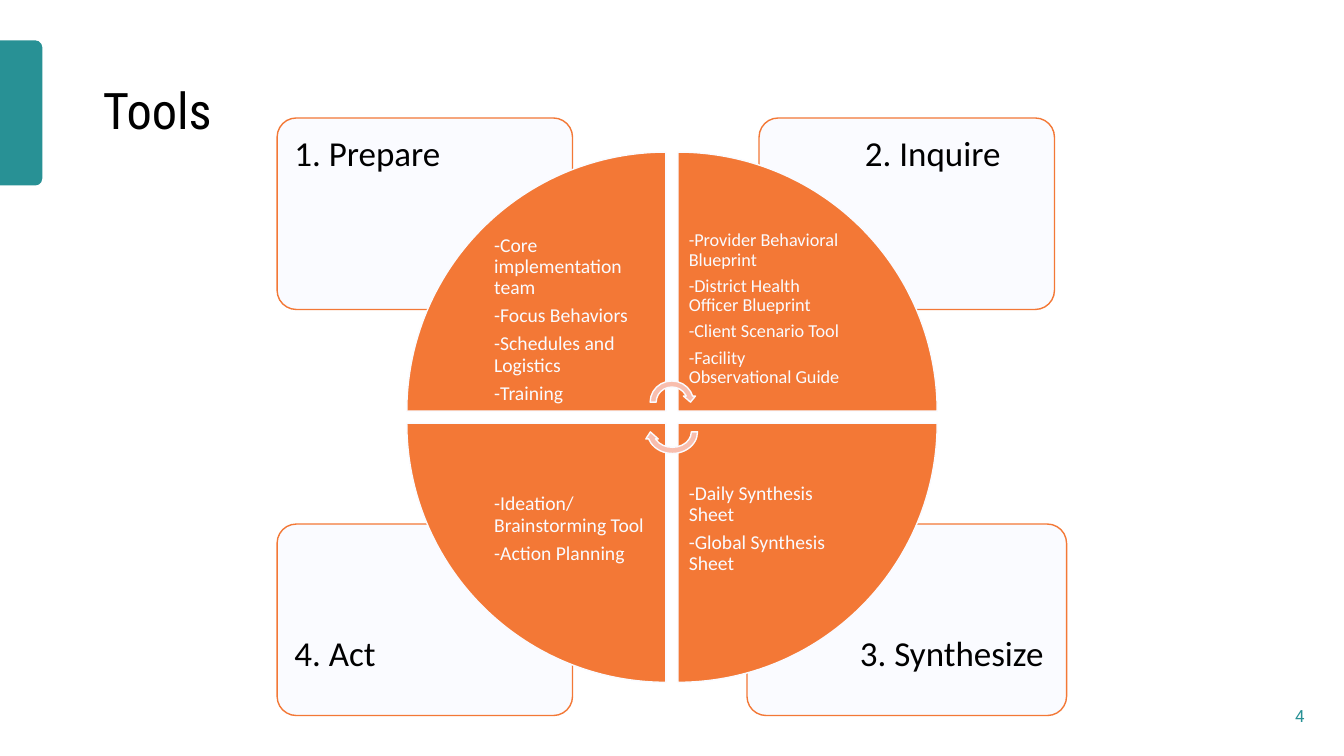
from lxml import etree
from pptx import Presentation
from pptx import util as u
from pptx.dml.color import RGBColor
from pptx.enum import shapes, text
from pptx.oxml.ns import qn

G = shapes.MSO_SHAPE
TOP, MID = text.MSO_ANCHOR.TOP, text.MSO_ANCHOR.MIDDLE
LEFT, RIGHT = text.PP_ALIGN.LEFT, text.PP_ALIGN.RIGHT


def rgb(code):
    return RGBColor.from_string(code)


class Deck:
    """Style and current slide; lengths are square cells, 100 columns wide."""
    TEAL, ORANGE, PALE, PEACH, BLACK = "289195", "F37836", "FAFBFF", "F8BEAE", "000000"

    def __init__(self):
        self.prs = Presentation()
        self.prs.slide_width, self.prs.slide_height = u.Inches(13.33), u.Inches(7.5)
        self.slide = self.prs.slides.add_slide(self.prs.slide_layouts[6])

    def cell(self, *vals):
        return [round(v * self.prs.slide_width / 100) for v in vals]

    def shape(self, kind, box, fill, line=None, turn=0, alpha=None):
        shp = self.slide.shapes.add_shape(kind, *self.cell(*box))
        shp.shadow.inherit = False
        shp.rotation = turn
        shp.fill.solid()
        shp.fill.fore_color.rgb = rgb(fill)
        if alpha:
            tint = shp.fill._xPr.find(".//" + qn("a:srgbClr"))
            etree.SubElement(tint, qn("a:alpha")).set("val", str(alpha * 1000))
        if line:
            shp.line.color.rgb = rgb(line)
            shp.line.width = u.Pt(1)
        else:
            shp.line.fill.background()
        return shp

    def label(self, box, lines, size, color, font="Calibri", anchor=MID,
              align=LEFT, pad=0.75, lead=0.9, after=0):
        frame = self.slide.shapes.add_textbox(*self.cell(*box)).text_frame
        frame.word_wrap = True
        frame.vertical_anchor = anchor
        inset = self.cell(pad)[0]
        frame.margin_left = frame.margin_right = inset
        frame.margin_top = frame.margin_bottom = inset
        for i, line in enumerate(lines):
            par = frame.add_paragraph() if i else frame.paragraphs[0]
            par.text = line
            par.alignment, par.line_spacing = align, lead
            par.space_after = u.Pt(after)
            par.font.size, par.font.name = u.Pt(size), font
            par.font.color.rgb = rgb(color)

    def card(self, box):
        shp = self.shape(G.ROUNDED_RECTANGLE, box, self.PALE, self.ORANGE, alpha=90)
        shp.adjustments[0] = 0.1


def main():
    deck = Deck()

    # Side tab, title and page number
    deck.shape(G.ROUND_2_SAME_RECTANGLE, (-3.83, 6.83, 10.8, 3.15), deck.TEAL, turn=90)
    deck.label((6.9, 3, 86.25, 10.88), ["Tools"], 36, deck.BLACK, "Roboto Condensed")
    deck.label((92.03, 51.75, 5.78, 3), ["4"], 12, deck.TEAL, "Roboto",
               align=RIGHT, lead=1)

    # Stage cards: left, top, width, then name, its left and top
    cards = [
        (55.58, 39, 23.78, "3. Synthesize", 63, 46.4),
        (20.62, 39, 21.98, "4. Act", 20.93, 46.4),
        (56.48, 8.78, 21.98, "2. Inquire", 63.38, 9.15),
        (20.62, 8.78, 21.98, "1. Prepare", 20.93, 9.15),
    ]
    for x, y, wide, name, lx, ly in cards:
        deck.card((x, y, wide, 14.25))
        deck.label((lx, ly, 16.05, 5), [name], 25, deck.BLACK, anchor=TOP, pad=0.98)

    # Wheel quarters, clockwise: column, row, text shift, size, tools
    midx, midy, half, side, area = 50, 31.05, 0.45, 19.28, 13.58
    parts = [
        (0, 0, 0, 14, ["-Core implementation team", "-Focus Behaviors",
                       "-Schedules and Logistics", "-Training"]),
        (1, 0, -0.8, 13, ["-Provider Behavioral Blueprint",
                          "-District Health Officer Blueprint",
                          "-Client Scenario Tool",
                          "-Facility\vObservational Guide"]),
        (1, 1, 1.1, 14, ["-Daily Synthesis Sheet", "-Global Synthesis Sheet"]),
        (0, 1, 1.1, 14, ["-Ideation/ Brainstorming Tool", "-Action Planning"]),
    ]

    def place(col, row, size):
        x = midx + half if col else midx - half - size
        y = midy + half if row else midy - half - size
        return x, y

    for i, (col, row, shift, size, tools) in enumerate(parts):
        deck.shape(G.PIE_WEDGE, (*place(col, row, side), side, side),
                   deck.ORANGE, deck.PALE, turn=90 * i)
        x, y = place(col, row, area)
        deck.label((x, y + shift, area, area), tools, size, deck.PALE,
                   pad=0.8, after=0.35 * size)

    # Turning arrows at the hub
    for box, turn in [((48.15, 28.13, 3.68, 3.6), 0), ((47.93, 30.3, 4.2, 3.68), 180)]:
        deck.shape(G.CIRCULAR_ARROW, box, deck.PEACH, deck.PALE, turn)

    deck.prs.save("out.pptx")


if __name__ == "__main__":
    main()
